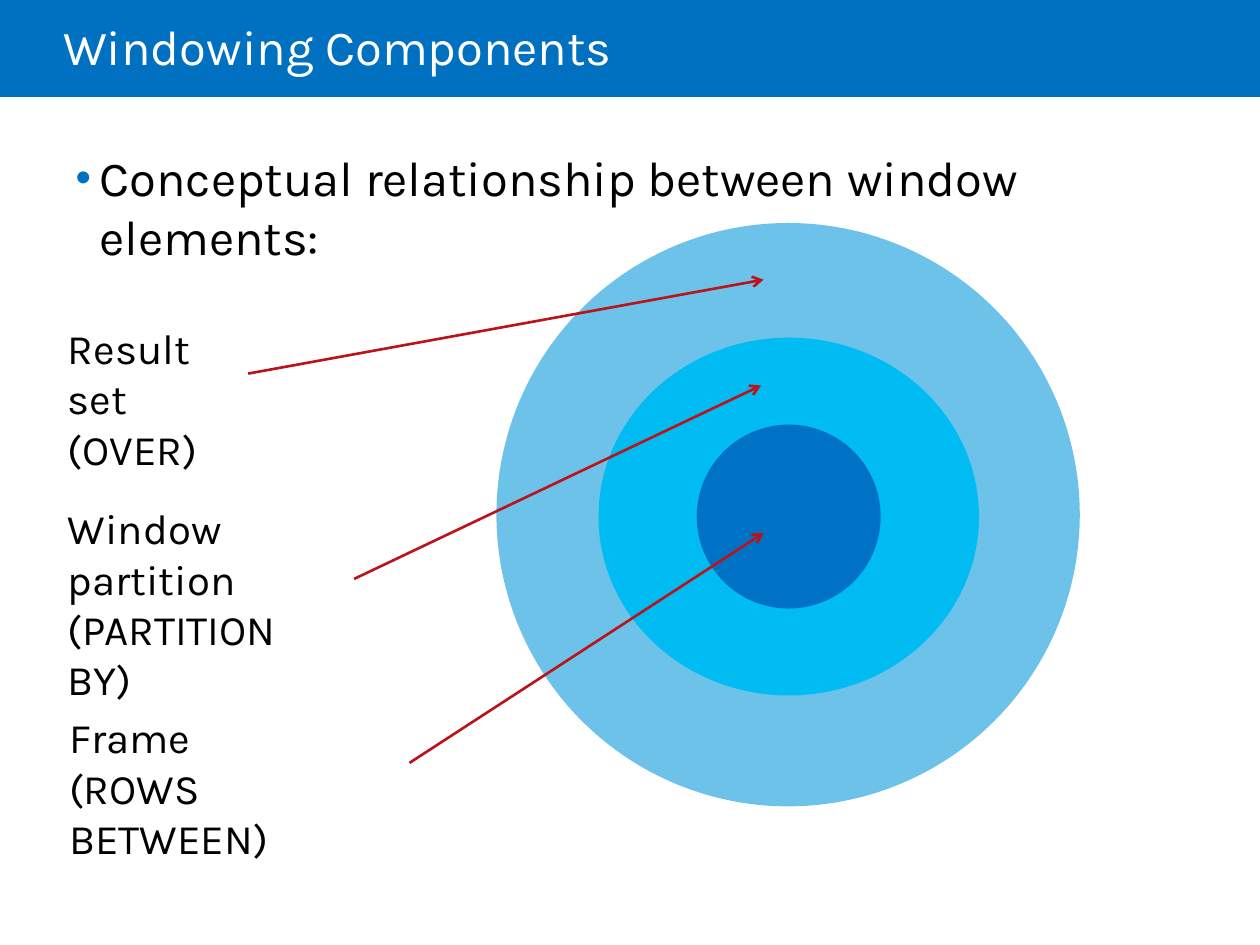
from dataclasses import dataclass

from lxml import etree
from pptx import Presentation
from pptx.dml.color import RGBColor
from pptx.enum.shapes import MSO_CONNECTOR, MSO_SHAPE
from pptx.enum.text import MSO_ANCHOR, MSO_AUTO_SIZE, PP_ALIGN
from pptx.oxml.ns import qn
from pptx.util import Emu, Pt

STRAIGHT = MSO_CONNECTOR.STRAIGHT
RECTANGLE, OVAL = MSO_SHAPE.RECTANGLE, MSO_SHAPE.OVAL
TOP, MIDDLE = MSO_ANCHOR.TOP, MSO_ANCHOR.MIDDLE
NO_AUTOFIT = MSO_AUTO_SIZE.NONE
LEFT = PP_ALIGN.LEFT
RIGHT_SIDE = 3
EMU_PER_PX = 9144  # 100 px to the inch


@dataclass(frozen=True)
class Theme:
    font: str = "Karla"
    heading_size: int = 28
    label_size: int = 24
    arrow_width: float = 1.5
    band: str = "0070C0"
    title: str = "FFFFFF"
    text: str = "000000"
    arrow: str = "BA141A"
    result_set: str = "6DC2E9"
    partition: str = "00BCF2"
    frame: str = "0072C6"


THEME = Theme()

# Boxes are left, top, width, height
HEADER_BOX = (0, 0, 1000, 77)
BODY_BOX = (50, 112, 888, 563)
DIAGRAM_BOX = (44, 177, 813, 474)

# Ring boxes, label boxes and arrow tips are relative to the diagram box
RINGS = [
    ((350, 0, 463, 463), THEME.result_set),
    ((431, 91, 302, 284), THEME.partition),
    ((509, 160, 146, 146), THEME.frame),
]
LABELS = [
    ((0, 74, 153, 91), ["Result set", "(OVER)"], (562, 45)),
    ((0, 217, 237, 131), ["Window\npartition", "(PARTITION BY)"], (560, 129)),
    ((1, 383, 280, 91), ["Frame\n(ROWS BETWEEN)"], (562, 246)),
]


def px(value):
    return Emu(value * EMU_PER_PX)


def place(shape, box):
    shape.left, shape.top, shape.width, shape.height = map(px, box)


def within(outer, box):
    left, top, width, height = box
    return outer[0] + left, outer[1] + top, width, height


def add_filled(slide, preset, box, color):
    shape = slide.shapes.add_shape(preset, *map(px, box))
    shape.shadow.inherit = False
    shape.fill.solid()
    shape.fill.fore_color.rgb = RGBColor.from_string(color)
    shape.line.fill.background()
    return shape


def add_text(paragraph, text, size, color):
    """Add one run for each line, with line breaks between them."""
    paragraph.alignment = LEFT
    for index, line in enumerate(text.split("\n")):
        if index:
            paragraph.add_line_break()
        run = paragraph.add_run()
        run.text = line
        run.font.name = THEME.font
        run.font.size = Pt(size)
        run.font.color.rgb = RGBColor.from_string(color)


def set_bullet(paragraph, indent, color):
    properties = paragraph._p.get_or_add_pPr()
    properties.set("marL", str(px(indent)))
    properties.set("indent", str(px(-indent)))
    bullet_color = etree.SubElement(properties, qn("a:buClr"))
    etree.SubElement(bullet_color, qn("a:srgbClr"), val=color)
    etree.SubElement(properties, qn("a:buSzPct"), val="90000")
    etree.SubElement(properties, qn("a:buFont"), typeface="Arial")
    etree.SubElement(properties, qn("a:buChar"), char="•")


def build_header(slide, box):
    title = slide.shapes.title
    band = add_filled(slide, RECTANGLE, box, THEME.band)
    title.element.addprevious(band.element)
    place(title, within(box, (50, 0, 850, 81)))
    frame = title.text_frame
    frame.auto_size = NO_AUTOFIT
    frame.vertical_anchor = MIDDLE
    frame.margin_left = 0
    paragraph = frame.paragraphs[0]
    paragraph.line_spacing = 0.85
    add_text(paragraph, "Windowing Components", THEME.heading_size, THEME.title)


def build_body(slide, box):
    body = slide.placeholders[1]
    place(body, box)
    frame = body.text_frame
    frame.auto_size = NO_AUTOFIT
    frame.vertical_anchor = TOP
    paragraph = frame.paragraphs[0]
    paragraph.space_before = Pt(6)
    set_bullet(paragraph, 19, THEME.band)
    add_text(paragraph, "Conceptual relationship between window elements:",
             THEME.heading_size, THEME.text)


def add_label(slide, box, texts):
    label = slide.shapes.add_textbox(*map(px, box))
    frame = label.text_frame
    frame.word_wrap = True
    for index, text in enumerate(texts):
        paragraph = frame.add_paragraph() if index else frame.paragraphs[0]
        add_text(paragraph, text, THEME.label_size, THEME.text)
    return label


def add_arrow(slide, label, tip):
    """Draw an arrow from the right side of a label to a point."""
    end = [px(value) for value in tip]
    arrow = slide.shapes.add_connector(STRAIGHT, *end, *end)
    arrow.begin_connect(label, RIGHT_SIDE)
    arrow.line.color.rgb = RGBColor.from_string(THEME.arrow)
    arrow.line.width = Pt(THEME.arrow_width)
    etree.SubElement(arrow.line._get_or_add_ln(), qn("a:tailEnd"), type="arrow")
    etree.SubElement(arrow.element.spPr, qn("a:effectLst"))


def build_diagram(slide, box):
    for ring_box, color in RINGS:
        add_filled(slide, OVAL, within(box, ring_box), color)
    for label_box, texts, (tip_x, tip_y) in LABELS:
        label = add_label(slide, within(box, label_box), texts)
        add_arrow(slide, label, (box[0] + tip_x, box[1] + tip_y))


def main():
    presentation = Presentation()
    presentation.slide_width, presentation.slide_height = px(1000), px(750)
    slide = presentation.slides.add_slide(presentation.slide_layouts[1])
    build_header(slide, HEADER_BOX)
    build_body(slide, BODY_BOX)
    build_diagram(slide, DIAGRAM_BOX)
    presentation.save("out.pptx")


if __name__ == "__main__":
    main()
